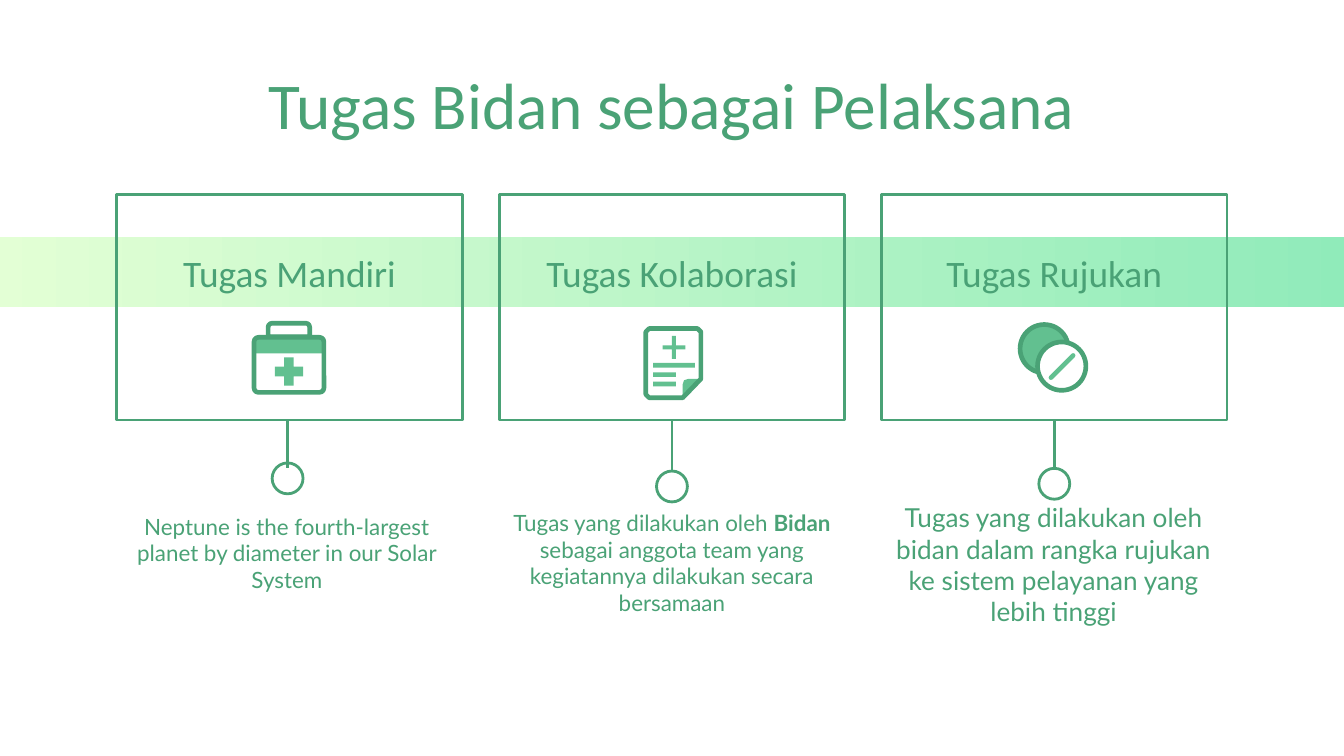
import pptx
import pptx.util
import pptx.dml.color
import pptx.enum.shapes
import pptx.enum.text
import pptx.oxml.ns
from lxml import etree

RGB = pptx.dml.color.RGBColor
SHAPE = pptx.enum.shapes.MSO_SHAPE
GREEN = RGB(0x4A, 0xA2, 0x76)
MINT = RGB(0x62, 0xC0, 0x90)
BAND_LEFT = RGB(0xE3, 0xFF, 0xD5)
BAND_RIGHT = RGB(0x90, 0xEB, 0xBA)
WHITE = RGB(0xFF, 0xFF, 0xFF)

PX = 4572  # 200 px to the inch
THIN, THICK = 1.5, 2.5


def px(*values):
    return [pptx.util.Emu(v * PX) for v in values]


class Deck:
    """Holds the style and the current slide."""

    def __init__(self, width, height):
        self.prs = pptx.Presentation()
        self.prs.slide_width, self.prs.slide_height = px(width, height)
        self.s = self.prs.slides.add_slide(self.prs.slide_layouts[6])

    def paint(self, sp, fill, line, weight):
        sp.shadow.inherit = False
        if fill is None:
            sp.fill.background()
        else:
            sp.fill.solid()
            sp.fill.fore_color.rgb = fill
        if line is None:
            sp.line.fill.background()
        else:
            sp.line.color.rgb = line
            sp.line.width = pptx.util.Pt(weight)
        return sp

    def shape(self, kind, box, fill=None, line=None, weight=THIN, adj=None):
        sp = self.s.shapes.add_shape(kind, *px(*box))
        if adj is not None:
            sp.adjustments[0] = adj
        return self.paint(sp, fill, line, weight)

    def band(self, box, left, right):
        sp = self.shape(SHAPE.RECTANGLE, box)
        sp.fill.gradient()
        sp.fill.gradient_angle = 0
        for stop, position, color in zip(sp.fill.gradient_stops, (0, 1), (left, right)):
            stop.position = position
            stop.color.rgb = color

    def outline(self, points, fill=None, line=None, weight=THIN):
        fb = self.s.shapes.build_freeform(*points[0], scale=PX)
        fb.add_line_segments(points[1:], close=True)
        sp = self.paint(fb.convert_to_shape(), fill, line, weight)
        if line is not None:
            etree.SubElement(sp.line._get_or_add_ln(), pptx.oxml.ns.qn("a:round"))

    def line(self, x1, y1, x2, y2, color=GREEN, weight=THIN, cap="flat"):
        cx = self.s.shapes.add_connector(
            pptx.enum.shapes.MSO_CONNECTOR.STRAIGHT, *px(x1, y1, x2, y2))
        cx.line.color.rgb = color
        cx.line.width = pptx.util.Pt(weight)
        cx.line._get_or_add_ln().set("cap", cap)
        etree.SubElement(cx._element.spPr, pptx.oxml.ns.qn("a:effectLst"))

    def text(self, box, runs, size, font):
        tf = self.s.shapes.add_textbox(*px(*box)).text_frame
        tf.word_wrap = True
        tf.vertical_anchor = pptx.enum.text.MSO_ANCHOR.MIDDLE
        tf.margin_left, tf.margin_top, tf.margin_right, tf.margin_bottom = px(20, 20, 20, 20)
        p = tf.paragraphs[0]
        p.alignment = pptx.enum.text.PP_ALIGN.CENTER
        p.font.size = pptx.util.Pt(size)
        p.font.name = font
        p.font.color.rgb = GREEN
        for words, bold in runs:
            r = p.add_run()
            r.text = words
            if bold:
                r.font.bold = True


def first_aid_bag(deck):
    deck.shape(SHAPE.ROUND_2_SAME_RECTANGLE, (378, 502, 104, 24), MINT, adj=0.3)
    deck.shape(SHAPE.ROUND_2_SAME_RECTANGLE, (399, 481, 62, 20), None, GREEN, THICK, 0.3)
    deck.shape(SHAPE.ROUNDED_RECTANGLE, (378, 502, 104, 82), None, GREEN, THICK, 0.08)
    deck.shape(SHAPE.CROSS, (409, 532, 42, 42), MINT, adj=0.33)


def medical_record(deck):
    deck.outline([(1024, 564), (1042, 564), (1042, 568), (1016, 592),
                  (1016, 572), (1018, 566)], MINT)
    deck.outline([(966, 489), (1038, 489), (1043, 494), (1043, 564), (1016, 592),
                  (966, 592), (961, 587), (961, 494)], None, GREEN, THICK)
    for y, width in ((540, 62), (554, 34), (568, 34)):
        deck.shape(SHAPE.RECTANGLE, (972, y, width, 7), MINT)
    deck.shape(SHAPE.CROSS, (986, 500, 34, 34), MINT, adj=0.41)


def pills(deck):
    deck.shape(SHAPE.OVAL, (1518, 483, 72, 72), MINT, GREEN, THICK)
    deck.shape(SHAPE.OVAL, (1544, 509, 72, 72), WHITE, GREEN, THICK)
    deck.line(1564, 562, 1597, 529, MINT, THICK, "rnd")


# Per column: heading, body runs, body size, body box, ring position, stem end
COLUMNS = [
    ("Tugas Mandiri",
     [("Neptune is the fourth-largest planet by diameter in our Solar System", False)],
     12, (170, 736, 514, 174), (405, 689), 696),
    ("Tugas Kolaborasi",
     [("Tugas yang dilakukan oleh ", False), ("Bidan", True),
      (" sebagai anggota team yang kegiatannya dilakukan secara bersamaan", False)],
     12, (743, 748, 514, 178), (977, 701), 701),
    ("Tugas Rujukan",
     [("Tugas yang dilakukan oleh bidan dalam rangka rujukan ke sistem pelayanan "
       "yang lebih tinggi", False)],
     14, (1311, 753, 514, 174), (1546, 697), 697),
]
CARD_W, CARD_H, CARD_TOP, CARD_PITCH = 514, 336, 289, 569
BAND_TOP, BAND_H = 353, 104
RING = 46


def main():
    deck = Deck(2000, 1125)

    # Band and title
    deck.band((-16, BAND_TOP, 2032, BAND_H), BAND_LEFT, BAND_RIGHT)
    deck.text((157, 119, 1686, 70), [("Tugas Bidan sebagai Pelaksana", False)], 35, "Calibri")

    # Cards with stem, ring and description
    for i, (heading, body, size, box, (ring_x, ring_y), stem_end) in enumerate(COLUMNS):
        left = 174 + i * CARD_PITCH
        stem_x = ring_x + RING // 2
        deck.shape(SHAPE.RECTANGLE, (left, CARD_TOP, CARD_W, CARD_H), None, GREEN)
        deck.shape(SHAPE.OVAL, (ring_x, ring_y, RING, RING), None, GREEN)
        deck.line(stem_x, CARD_TOP + CARD_H, stem_x, stem_end)
        deck.text((left, BAND_TOP, CARD_W, BAND_H), [(heading, False)], 20, "Calibri")
        deck.text(box, body, size, "Lato")

    # Icons
    first_aid_bag(deck)
    medical_record(deck)
    pills(deck)

    deck.prs.save("out.pptx")


if __name__ == "__main__":
    main()
